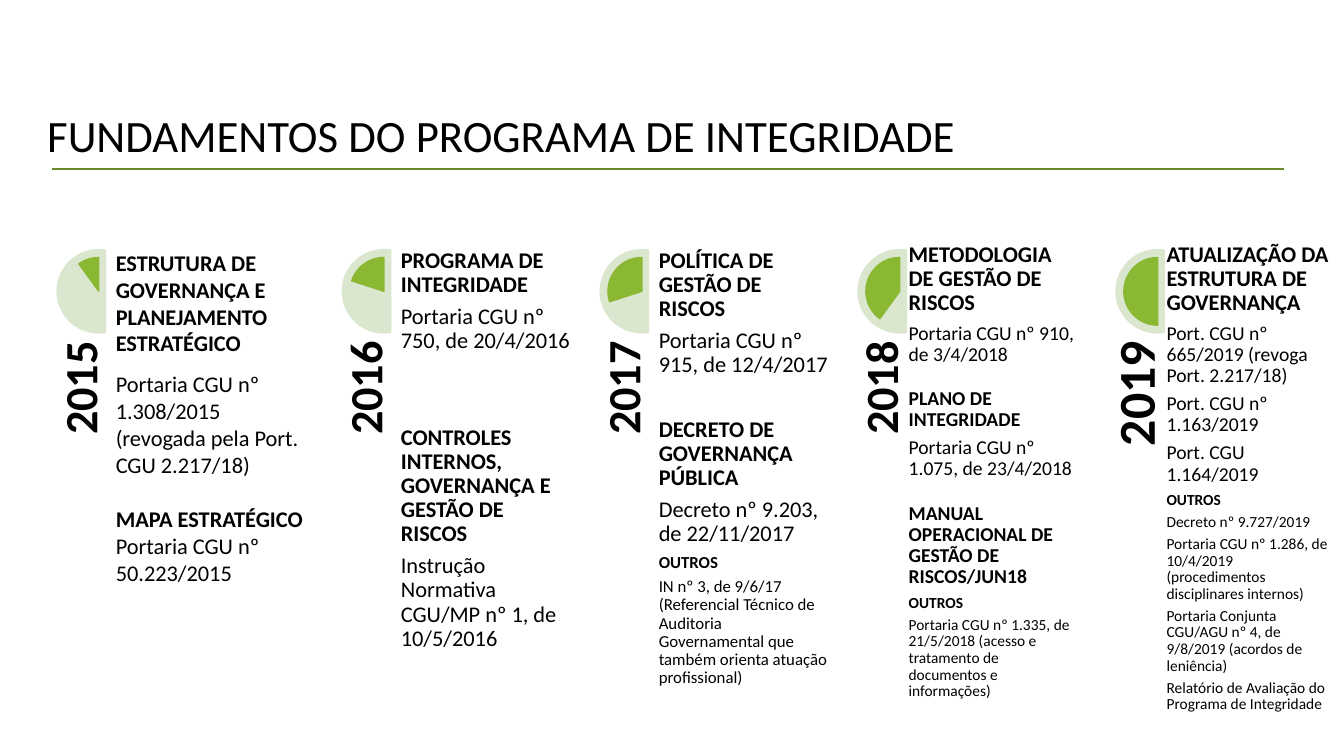
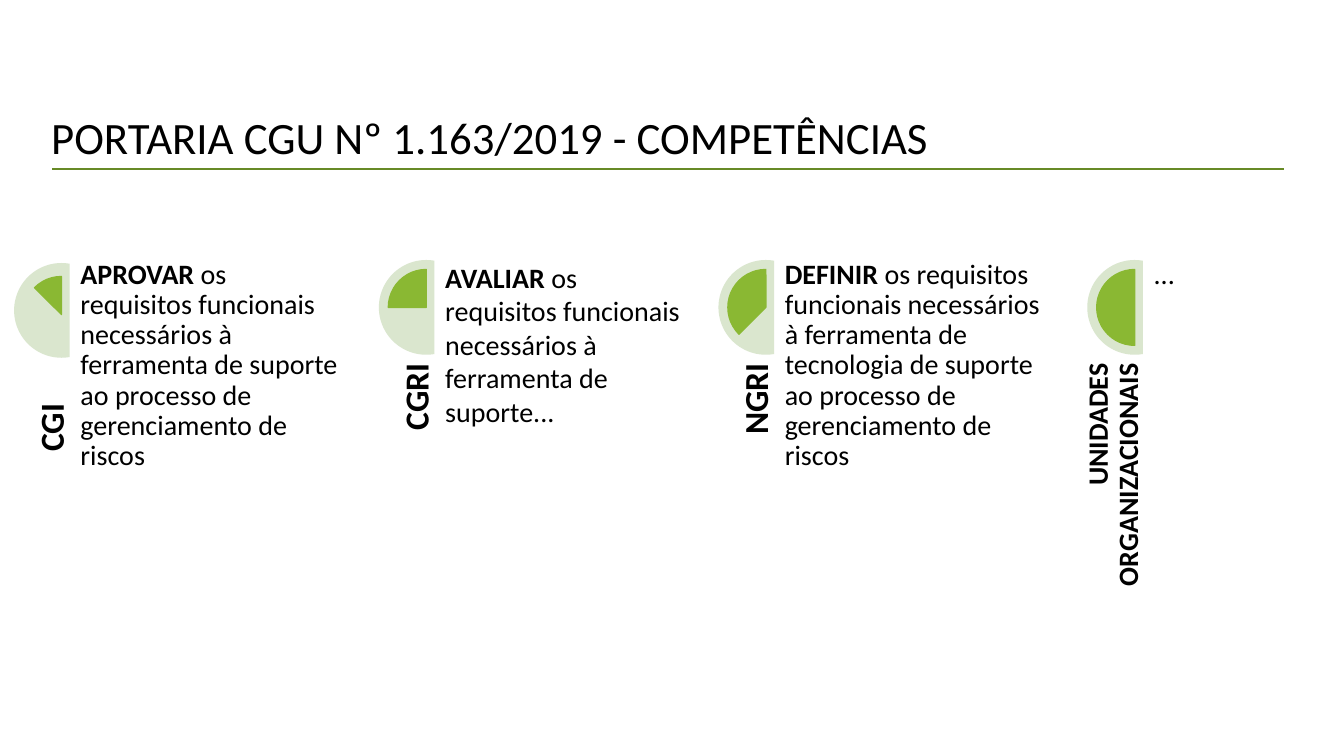
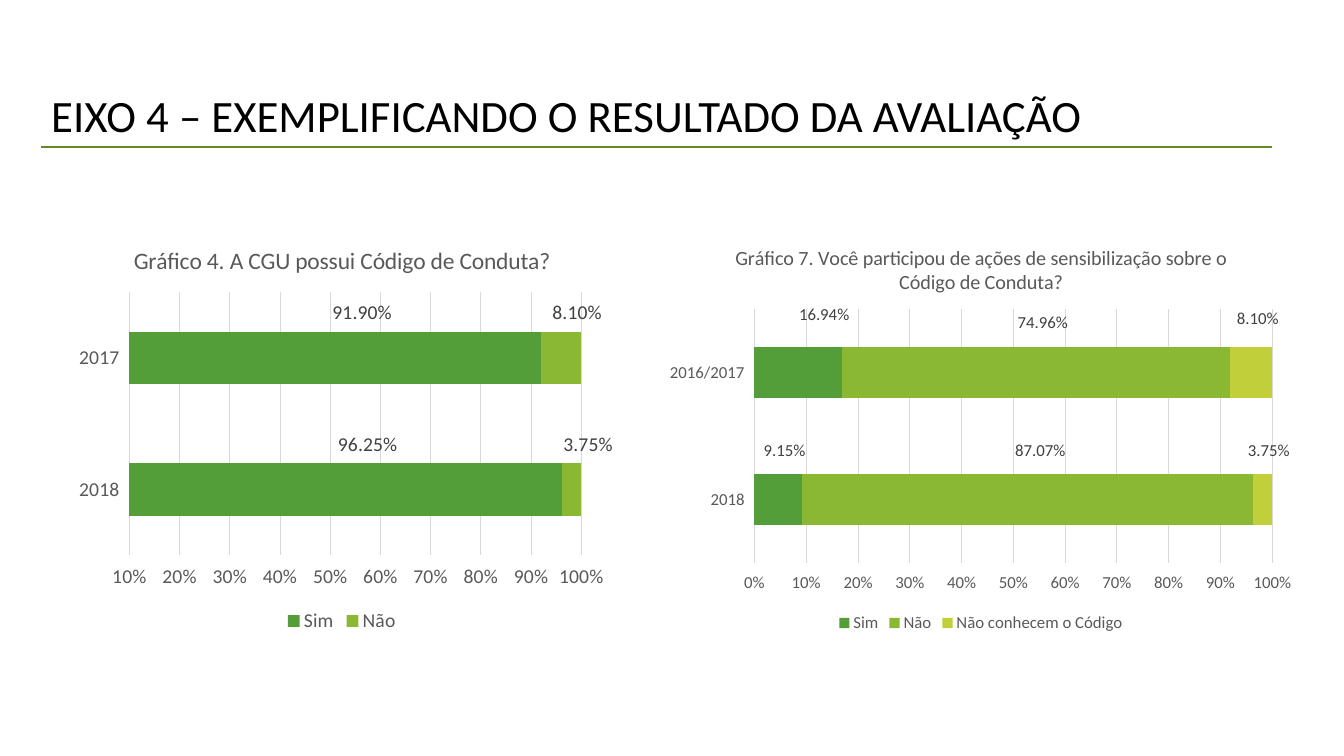
"""Builds three slides on an integrity programme: two dial timelines and a pair of survey charts."""
from pptx import Presentation
from pptx.chart.data import CategoryChartData
from pptx.dml.color import RGBColor
from pptx.enum.chart import XL_CHART_TYPE as ChartType, XL_LEGEND_POSITION as LegendPosition
from pptx.enum.shapes import MSO_CONNECTOR as Connector, MSO_SHAPE as Shape
from pptx.enum.text import MSO_ANCHOR as Anchor, MSO_AUTO_SIZE as AutoSize, PP_ALIGN as Align
from pptx.oxml.ns import qn
from pptx.util import Inches, Pt
from lxml.etree import SubElement

COLORS = {
    "text": "000000", "rule": "678A26", "ring": "DAE6CE", "wedge": "8AB833",
    "axis": "595959", "label": "404040", "grid": "D9D9D9",
}
SERIES_COLORS = ["549E39", "8AB833", "C0CF3A"]
FONT = "Calibri"
SLIDE_WIDTH, SLIDE_HEIGHT = 13.33, 7.5
RULE_WIDTH = 12.21


def head(text, size=16, gap=0):
    """Describes a bold paragraph."""
    return text, "", size, gap


def plain(text, size=16, gap=0):
    """Describes a regular paragraph."""
    return "", text, size, gap


TIMELINE = {
    "left": 0.56, "top": 2.47, "ring": 0.84, "gap": 0.29, "label_length": 2.44,
    "columns": [
        {"label": "2015", "size": 33, "width": 1.95, "loose": 0, "body": [
            head("ESTRUTURA DE GOVERNANÇA E PLANEJAMENTO ESTRATÉGICO"),
            plain("Portaria CGU nº 1.308/2015 (revogada pela Port. CGU 2.217/18)", gap=10),
            head("MAPA ESTRATÉGICO", gap=19.5),
            plain("Portaria CGU nº 50.223/2015")]},
        {"label": "2016", "size": 33, "width": 1.68, "body": [
            head("PROGRAMA DE INTEGRIDADE"),
            plain("Portaria CGU nº 750, de 20/4/2016"),
            head("CONTROLES INTERNOS, GOVERNANÇA E GESTÃO DE RISCOS", gap=46),
            plain("Instrução Normativa CGU/MP nº 1, de 10/5/2016")]},
        {"label": "2017", "size": 33, "width": 1.68, "body": [
            head("POLÍTICA DE GESTÃO DE RISCOS"),
            plain("Portaria CGU nº 915, de 12/4/2017"),
            head("DECRETO DE GOVERNANÇA PÚBLICA", gap=23),
            plain("Decreto nº 9.203, de 22/11/2017"),
            head("OUTROS", 12),
            plain("IN nº 3, de 9/6/17 (Referencial Técnico de Auditoria Governamental "
                  "que também orienta atuação profissional)", 12)]},
        {"label": "2018", "size": 33, "width": 1.68, "shift": (-0.08, -0.06), "body": [
            head("METODOLOGIA DE GESTÃO DE RISCOS"),
            plain("Portaria CGU nº 910, de 3/4/2018", 14),
            head("PLANO DE INTEGRIDADE", 14, 11.5),
            plain("Portaria CGU nº 1.075, de 23/4/2018", 14),
            head("MANUAL OPERACIONAL DE GESTÃO DE RISCOS/JUN18", 14, 11.5),
            head("OUTROS", 11),
            plain("Portaria CGU nº 1.335, de 21/5/2018 (acesso e tratamento de "
                  "documentos e informações)", 11)]},
        {"label": "2019", "size": 37, "width": 1.68, "shift": (-0.08, -0.06), "body": [
            head("ATUALIZAÇÃO DA ESTRUTURA DE GOVERNANÇA"),
            plain("Port. CGU nº 665/2019 (revoga Port. 2.217/18)", 14),
            plain("Port. CGU nº 1.163/2019", 14),
            plain("Port. CGU 1.164/2019", 14),
            head("OUTROS", 11),
            plain("Decreto nº 9.727/2019", 11),
            plain("Portaria CGU nº 1.286, de 10/4/2019 (procedimentos disciplinares internos)", 11),
            plain("Portaria Conjunta CGU/AGU nº 4, de 9/8/2019 (acordos de leniência)", 11),
            plain("Relatório de Avaliação do Programa de Integridade", 11)]},
    ],
}
DUTIES = {
    "left": 0.14, "top": 2.58, "ring": 0.94, "gap": 0.37, "label_length": 2.73,
    "columns": [
        {"label": "CGI", "size": 24, "width": 2.59, "indent": 0.4, "drop": (0.03, 0.07), "body": [
            ("APROVAR", " os requisitos funcionais necessários à ferramenta de suporte ao "
             "processo de gerenciamento de riscos", 20, 0)]},
        {"label": "CGRI", "size": 24, "width": 2.34, "loose": 6, "body": [
            ("AVALIAR", " os requisitos funcionais necessários à ferramenta de suporte...", 20, 0)]},
        {"label": "NGRI", "size": 24, "width": 2.63, "body": [
            ("DEFINIR", " os requisitos funcionais necessários à ferramenta de tecnologia de "
             "suporte ao processo de gerenciamento de riscos", 20, 0)]},
        {"label": "UNIDADES ORGANIZACIONAIS", "size": 20, "width": 1.75, "body": [plain("...", 20)]},
    ],
}
CHARTS = [
    {"kind": ChartType.BAR_STACKED_100, "left": 0.69, "width": 5.4, "size": 14, "minimum": 0.1,
     "title": "Gráfico 4. A CGU possui Código de Conduta?", "cats": ["2018", "2017"],
     "plot": (0.11, 0.16, 0.83, 0.64),
     "series": {"Sim": (0.9625, 0.919), "Não": (0.0375, 0.081)},
     "offsets": [[(0.04, -0.11), (0.05, -0.11)], [(0.03, -0.11), (0.03, -0.11)]]},
    {"kind": ChartType.BAR_STACKED, "left": 6.52, "width": 6.42, "size": 12, "minimum": 0,
     "title": "Gráfico 7. Você participou de ações de sensibilização sobre o Código de Conduta?",
     "cats": ["2018", "2016/2017"], "plot": (0.15, 0.2, 0.8, 0.62),
     "series": {"Sim": (0.0915, 0.1694), "Não": (0.8707, 0.7496),
                "Não conhecem o Código": (0.0375, 0.081)},
     "offsets": [[(0.01, -0.12), (0.04, -0.14)], [(0.02, -0.12), (0.01, -0.12)],
                 [(0.01, -0.12), (0.01, -0.13)]]},
]


def rgb(name):
    return RGBColor.from_string(COLORS[name])


def style_font(font, size, color="text", bold=False):
    font.name, font.size, font.bold = FONT, Pt(size), bold
    font.color.rgb = rgb(color)


def add_box(slide, left, top, width, height, inset=None):
    box = slide.shapes.add_textbox(*map(Inches, (left, top, width, height)))
    frame = box.text_frame
    frame.word_wrap = True
    if inset is not None:
        frame.margin_left = frame.margin_top = frame.margin_right = frame.margin_bottom = Inches(inset)
    return box


def add_titled_slide(deck, title, left, top, rule_left, rule_top):
    slide = deck.slides.add_slide(deck.slide_layouts[6])
    rule = slide.shapes.add_connector(Connector.STRAIGHT, Inches(rule_left), Inches(rule_top),
                                      Inches(rule_left + RULE_WIDTH), Inches(rule_top))
    rule.line.color.rgb, rule.line.width = rgb("rule"), Pt(1.5)
    SubElement(rule._element.spPr, qn("a:effectLst"))
    frame = add_box(slide, left, top, 12.5, 0.64).text_frame
    frame.auto_size = AutoSize.SHAPE_TO_FIT_TEXT
    frame.text = title
    style_font(frame.paragraphs[0].runs[0].font, 32)
    return slide


def add_arc(slide, preset, left, top, size, color, start, end):
    """Adds a chord or pie between two angles in degrees."""
    arc = slide.shapes.add_shape(preset, *map(Inches, (left, top, size, size)))
    arc.shadow.inherit = False
    arc.fill.solid()
    arc.fill.fore_color.rgb = rgb(color)
    arc.line.fill.background()
    arc.adjustments[0], arc.adjustments[1] = start * 0.6, end * 0.6
    return arc


def add_label(slide, column, left, top, thickness, length):
    """Adds a label that reads upwards, with its end at the top."""
    box = add_box(slide, left + (thickness - length) / 2, top + (length - thickness) / 2,
                  length, thickness, 0)
    box.rotation = 270
    frame = box.text_frame
    frame.margin_right = Inches(column.get("indent", 0))
    frame.vertical_anchor = Anchor.BOTTOM
    frame.text = column["label"]
    para = frame.paragraphs[0]
    para.alignment, para.line_spacing = Align.RIGHT, 0.9
    style_font(para.runs[0].font, column["size"], bold=True)


def fill_body(frame, column):
    for index, (lead, rest, size, gap) in enumerate(column["body"]):
        para = frame.add_paragraph() if index else frame.paragraphs[0]
        para.line_spacing = 1.0 if "loose" in column else 0.9
        para.space_after = Pt(column.get("loose", round(0.35 * size, 1)))
        if gap:
            para.space_before = Pt(gap)
        for text, bold in ((lead, True), (rest, False)):
            if text:
                span = para.add_run()
                span.text = text
                style_font(span.font, size, bold=bold)


def add_dials(slide, group):
    """Places one dial, label and text per column, each dial fuller than the last."""
    left, top, ring, columns = (group[key] for key in ("left", "top", "ring", "columns"))
    for number, column in enumerate(columns, 1):
        ring_drop, wedge_drop = column.get("drop", (0, 0))
        shift_x, shift_y = column.get("shift", (0, 0))
        add_arc(slide, Shape.CHORD, left, top + ring_drop, ring, "ring", 80, 280)
        wedge = add_arc(slide, Shape.PIE, left + 0.1 * ring, top + 0.1 * ring + wedge_drop,
                        0.8 * ring, "wedge", 270 - 180 * number / len(columns), 270)
        wedge.line.color.rgb, wedge.line.width = rgb("wedge"), Pt(1)
        add_label(slide, column, left, top + 1.09 * ring, 0.6 * ring, group["label_length"])
        body = add_box(slide, left + 0.7 * ring + shift_x, top + shift_y, column["width"], 4 * ring, 0)
        fill_body(body.text_frame, column)
        left += 0.7 * ring + column["width"] + group["gap"]


def add_layout(layout, values, inner=False):
    """Writes a manual chart layout from x, y and, if given, width and height."""
    manual = SubElement(layout, qn("c:manualLayout"))
    if inner:
        SubElement(manual, qn("c:layoutTarget")).set("val", "inner")
        for tag in ("c:xMode", "c:yMode"):
            SubElement(manual, qn(tag)).set("val", "edge")
    for tag, value in zip("xywh", values):
        SubElement(manual, qn("c:" + tag)).set("val", str(value))


def style_axis(axis, size):
    style_font(axis.tick_labels.font, size, "axis")
    axis.format.line.fill.background()


def label_points(series, offsets, size):
    for index in range(len(offsets)):
        style_font(series.points[index].data_label.font, size, "label")
    for label, offset in zip(series._element.iter(qn("c:dLbl")), offsets):
        layout = SubElement(label, qn("c:layout"))
        label.insert(1, layout)
        add_layout(layout, offset)
    for leader in series._element.iter(qn("c:showLeaderLines")):
        leader.set("val", "0")


def add_survey(slide, survey):
    size = survey["size"]
    data = CategoryChartData(number_format="0.00%")
    data.categories = survey["cats"]
    for name, values in survey["series"].items():
        data.add_series(name, values)
    chart = slide.shapes.add_chart(survey["kind"], *map(Inches, (survey["left"], 2.25,
                                   survey["width"], 4.07)), data).chart
    style_font(chart.font, size)
    chart.has_title = True
    chart.chart_title.include_in_layout = False
    chart.chart_title.text_frame.text = survey["title"]
    style_font(chart.chart_title.text_frame.paragraphs[0].runs[0].font, 1.2 * size, "axis")
    chart.has_legend = True
    chart.legend.position = LegendPosition.BOTTOM
    chart.legend.include_in_layout = False
    style_font(chart.legend.font, size, "axis")

    style_axis(chart.category_axis, size)
    axis = chart.value_axis
    style_axis(axis, size)
    axis.minimum_scale, axis.maximum_scale, axis.major_unit = survey["minimum"], 1, 0.1
    axis.tick_labels.number_format, axis.tick_labels.number_format_is_linked = "0%", False
    axis.major_gridlines.format.line.color.rgb = rgb("grid")
    axis.major_gridlines.format.line.width = Pt(0.75)

    plot = chart.plots[0]
    plot.gap_width, plot.overlap, plot.vary_by_categories = 150, 100, False
    for series, color, offsets in zip(plot.series, SERIES_COLORS, survey["offsets"]):
        series.format.fill.solid()
        series.format.fill.fore_color.rgb = RGBColor.from_string(color)
        label_points(series, offsets, size)
    area = chart._chartSpace.find(".//" + qn("c:plotArea"))
    layout = area.find(qn("c:layout"))
    if layout is None:
        layout = SubElement(area, qn("c:layout"))
        area.insert(0, layout)
    add_layout(layout, survey["plot"], inner=True)


def main():
    deck = Presentation()
    deck.slide_width, deck.slide_height = Inches(SLIDE_WIDTH), Inches(SLIDE_HEIGHT)
    add_dials(add_titled_slide(deck, "FUNDAMENTOS DO PROGRAMA DE INTEGRIDADE",
                               0.37, 1.02, 0.52, 1.68), TIMELINE)
    add_dials(add_titled_slide(deck, "PORTARIA CGU Nº 1.163/2019 - COMPETÊNCIAS",
                               0.41, 1.04, 0.52, 1.68), DUTIES)
    slide = add_titled_slide(deck, "EIXO 4 – EXEMPLIFICANDO O RESULTADO DA AVALIAÇÃO",
                             0.41, 0.82, 0.41, 1.46)
    for survey in CHARTS:
        add_survey(slide, survey)
    deck.save("out.pptx")


if __name__ == "__main__":
    main()
